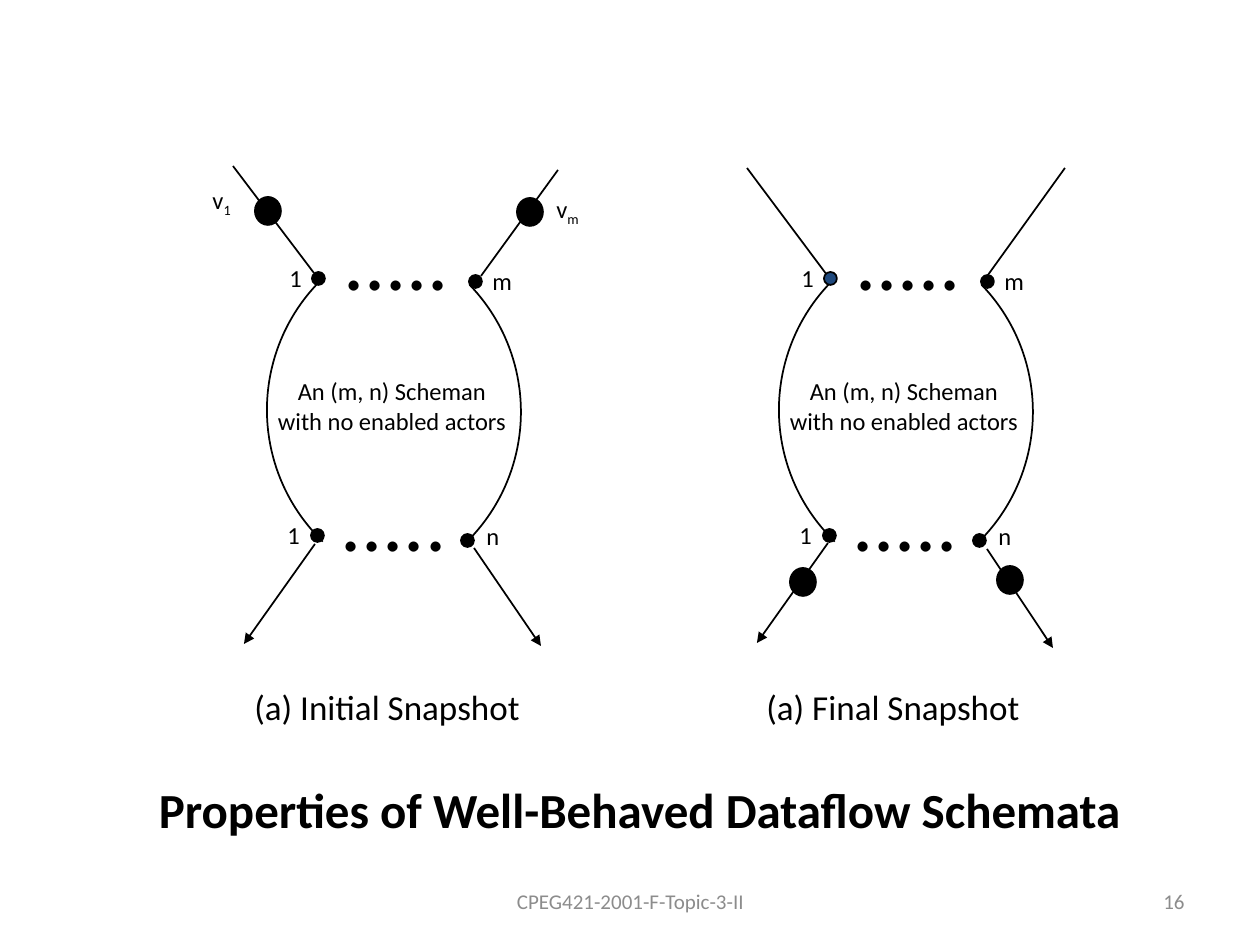
from lxml.etree import SubElement
from pptx import Presentation
from pptx.dml.color import RGBColor
from pptx.enum.shapes import MSO_CONNECTOR as CONN, MSO_SHAPE as SHAPE
from pptx.enum.text import MSO_ANCHOR as ANCHOR, PP_ALIGN as ALIGN
from pptx.oxml.ns import qn
from pptx.util import Pt

PX = 914400 // 126
BLACK = RGBColor(0, 0, 0)
NAVY = RGBColor(0x1F, 0x49, 0x7D)
GRAY = RGBColor(0x8C, 0x8C, 0x8C)
FONT = "Calibri"

# Parts common to both snapshots, in px from the panel's left edge
PORT, TOKEN = (13, 13), (26, 28)
RADIUS = 183
ARCS = [(450, 410, 134, 224), (338, 412, 316, 46)]  # centre, start and end degrees
PORTS = [(312, 272), (311, 529), (469, 275), (461, 534)]
ELLIPSES = [(331, 200), (328, 461)]
BODY = "An (m, n) Scheman\nwith no enabled actors"
PORT_LABELS = [("1", 277, 257, 39), ("m", 480, 260, 45),
               ("1", 275, 514, 39), ("n", 474, 515, 39)]

# What differs between the snapshots
PANELS = [
    dict(left=0, caption="(a) Initial Snapshot", first_port=BLACK,
         inputs=[(314, 273, 233, 166), (481, 276, 558, 170)],
         outputs=[(315, 544, 244, 644), (474, 548, 541, 646)],
         tokens=[(255, 197), (517, 198)],
         values=[("v", "1", 200, 179, 45), ("v", "m", 544, 188, 50)]),
    dict(left=512, caption="(a) Final Snapshot", first_port=NAVY,
         inputs=[(315, 275, 235, 168), (476, 275, 553, 168)],
         outputs=[(316, 543, 245, 643), (475, 549, 541, 648)],
         tokens=[(485, 566), (278, 568)],
         values=[]),
]

prs = Presentation()
prs.slide_width, prs.slide_height = 1260 * PX, 945 * PX
s = prs.slides.add_slide(prs.slide_layouts[6])


def add_text(text, x, y, w, h, size=14, color=BLACK, bold=False,
             align=ALIGN.LEFT, anchor=ANCHOR.TOP, wrap=False, sub=""):
    tf = s.shapes.add_textbox(x * PX, y * PX, w * PX, h * PX).text_frame
    tf.word_wrap, tf.vertical_anchor = wrap, anchor
    for i, line in enumerate(text.split("\n")):
        p = tf.add_paragraph() if i else tf.paragraphs[0]
        p.alignment = align
        for part in filter(None, (line, sub)):
            r = p.add_run()
            r.text = part
            r.font.name, r.font.size, r.font.bold = FONT, Pt(size), bold
            r.font.color.rgb = color
    if sub:
        r.font._element.set("baseline", "-25000")


def add_outlined(kind, x, y, w, h, fill=None):
    sp = s.shapes.add_shape(kind, x * PX, y * PX, w * PX, h * PX)
    sp.shadow.inherit = False
    sp.line.color.rgb, sp.line.width = BLACK, Pt(1)
    if fill is None:
        sp.fill.background()
    else:
        sp.fill.solid()
        sp.fill.fore_color.rgb = fill
    return sp


def add_line(x1, y1, x2, y2, arrow=False):
    c = s.shapes.add_connector(CONN.STRAIGHT, x1 * PX, y1 * PX, x2 * PX, y2 * PX)
    c.line.color.rgb, c.line.width = BLACK, Pt(1)
    if arrow:
        SubElement(c.line._get_or_add_ln(), qn("a:tailEnd"), type="triangle")
    SubElement(c._element.spPr, qn("a:effectLst"))


def add_panel(left, caption, first_port, inputs, outputs, tokens, values):
    # Schema outline: two facing arcs
    for cx, cy, start, end in ARCS:
        arc = add_outlined(SHAPE.ARC, left + cx - RADIUS, cy - RADIUS,
                           2 * RADIUS, 2 * RADIUS)
        for i, degrees in enumerate((start, end)):
            arc.adjustments[i] = degrees * 0.6  # 60000 units a degree, over 100000

    # Input and output arcs of the graph
    for x1, y1, x2, y2 in inputs:
        add_line(left + x1, y1, left + x2, y2)
    for x1, y1, x2, y2 in outputs:
        add_line(left + x1, y1, left + x2, y2, arrow=True)

    # Ports and tokens
    for i, (x, y) in enumerate(PORTS):
        add_outlined(SHAPE.OVAL, left + x, y, *PORT, fill=BLACK if i else first_port)
    for x, y in tokens:
        add_outlined(SHAPE.OVAL, left + x, y, *TOKEN, fill=BLACK)

    # Labels
    for x, y in ELLIPSES:
        add_text(".....", left + x, y, 142, 113, size=48)
    add_text(BODY, left + 257, 370, 270, 71, align=ALIGN.CENTER)
    for text, x, y, w in PORT_LABELS:
        add_text(text, left + x, y, w, 42)
    for text, sub, x, y, w in values:
        add_text(text, left + x, y, w, 42, sub=sub)
    add_text(caption, left + 242, 679, 316, 54, size=20)


for panel in PANELS:
    add_panel(**panel)

# Title, footer and slide number
add_text("Properties of Well-Behaved Dataflow Schemata", 68, 759, 1143, 100,
         size=28, bold=True, align=ALIGN.CENTER, anchor=ANCHOR.MIDDLE, wrap=True)
add_text("CPEG421-2001-F-Topic-3-II", 431, 876, 399, 50, size=12, color=GRAY,
         align=ALIGN.CENTER, anchor=ANCHOR.MIDDLE, wrap=True)
add_text("16", 903, 876, 294, 50, size=12, color=GRAY,
         align=ALIGN.RIGHT, anchor=ANCHOR.MIDDLE, wrap=True)

prs.save("out.pptx")
